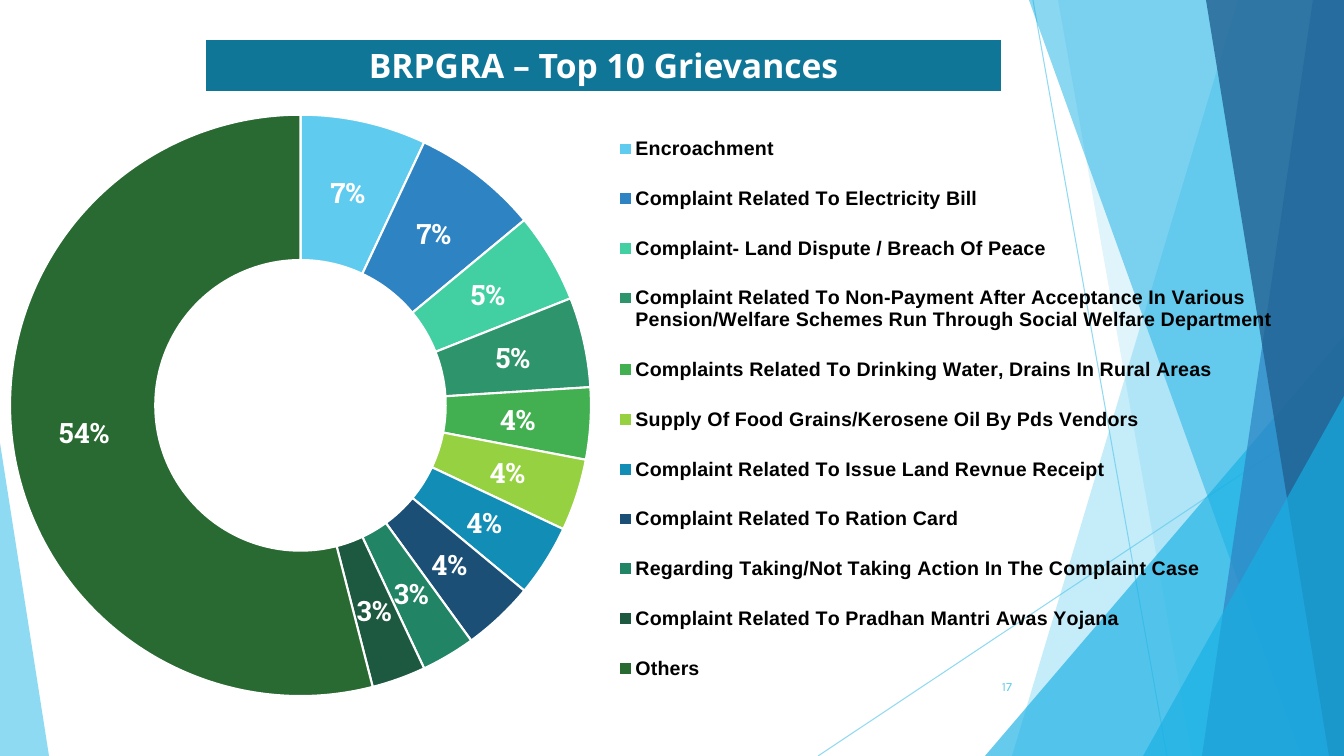
from lxml.etree import SubElement
from pptx import Presentation
from pptx.chart.data import CategoryChartData
from pptx.dml.color import RGBColor
from pptx.enum.chart import XL_CHART_TYPE as ChartType, XL_LEGEND_POSITION as LegendPosition
from pptx.enum.shapes import MSO_CONNECTOR as Connector
from pptx.enum.text import MSO_ANCHOR as Anchor, PP_ALIGN as Align
from pptx.oxml import parse_xml
from pptx.oxml.ns import nsdecls, qn
from pptx.util import Pt

SCALE = 914400 / 100.8
PAGE = (1344, 756)

TITLE = "BRPGRA – Top 10 Grievances"
TITLE_BOX = (206, 40, 795, 51)
NUMBER = "17"
NUMBER_BOX = (947, 666, 75, 41)
CHART_BOX = (9, 84, 1292, 656)
RING_LAYOUT = (0, 0.04, 0.45, 0.9)
LEGEND_LAYOUT = (0.46, 0.04, 0.53, 0.91)

GRIEVANCES = [
    ("Encroachment", 7, "5FCBEF"),
    ("Complaint Related To Electricity Bill", 7, "2E83C3"),
    ("Complaint- Land Dispute / Breach Of Peace", 5, "42D0A2"),
    ("Complaint Related To Non-Payment After Acceptance In Various "
     "Pension/Welfare Schemes Run Through Social Welfare Department", 5, "2E946B"),
    ("Complaints Related To Drinking Water, Drains In Rural Areas", 4, "42B051"),
    ("Supply Of Food Grains/Kerosene Oil By Pds Vendors", 4, "96D141"),
    ("Complaint Related To Issue Land Revnue Receipt", 4, "128DB6"),
    ("Complaint Related To Ration Card", 4, "1C4F75"),
    ("Regarding Taking/Not Taking Action In The Complaint Case", 3, "218464"),
    ("Complaint Related To Pradhan Mantri Awas Yojana", 3, "1C5940"),
    ("Others", 54, "286A31"),
]

RAYS = [(1033, 0, 1167, 756), (1344, 406, 818, 756)]
FACETS = [
    ([(1238, 0), (1344, 0), (1344, 756), (1012, 756)], "5FCBEF", 36),
    ([(1058, 0), (1344, 0), (1344, 756), (1192, 756)], "5FCBEF", 20),
    ([(1344, 336), (1344, 756), (985, 756)], "17B0E4", 66),
    ([(1029, 0), (1344, 0), (1344, 756), (1301, 756)], "17B0E4", 50),
    ([(1313, 0), (1344, 0), (1344, 756), (1202, 756)], "2E83C3", 70),
    ([(1206, 0), (1344, 0), (1344, 756), (1329, 756)], "226292", 80),
    ([(1344, 396), (1344, 756), (1143, 756)], "17B0E4", 66),
    ([(0, 443), (49, 756), (0, 756)], "5FCBEF", 70),
]


def emu(*lengths):
    return [round(length * SCALE) for length in lengths]


def paint(fill, color, opacity=100):
    fill.solid()
    fill.fore_color.rgb = RGBColor.from_string(color)
    if opacity < 100:
        tint = fill._xPr.find(".//" + qn("a:srgbClr"))
        SubElement(tint, qn("a:alpha"), val=str(opacity * 1000))


def style(font, name, size, color, bold=False):
    font.name, font.size, font.bold = name, Pt(size), bold
    font.color.rgb = RGBColor.from_string(color)


def layout_xml(area, inner=False):
    target = '<c:layoutTarget val="inner"/>' if inner else ""
    modes = '<c:xMode val="edge"/><c:yMode val="edge"/>'
    sizes = "".join(f'<c:{key} val="{value}"/>' for key, value in zip("xywh", area))
    return parse_xml(f'<c:layout {nsdecls("c")}><c:manualLayout>{target}{modes}{sizes}'
                     "</c:manualLayout></c:layout>")


def add_backdrop(page):
    for ray in RAYS:
        line = page.shapes.add_connector(Connector.STRAIGHT, *emu(*ray))
        paint(line.line.fill, "5FCBEF", 70)
        line.line.width = Pt(0.75)
        SubElement(line._element.spPr, qn("a:effectLst"))
    for corners, color, opacity in FACETS:
        builder = page.shapes.build_freeform(*corners[0], scale=SCALE)
        builder.add_line_segments(corners[1:], close=True)
        facet = builder.convert_to_shape()
        facet.shadow.inherit = False
        facet.line.fill.background()
        paint(facet.fill, color, opacity)


def add_title(page):
    title = page.shapes.title
    title.left, title.top, title.width, title.height = emu(*TITLE_BOX)
    paint(title.fill, "0F7698")
    title.text_frame.text = TITLE
    title.text_frame.vertical_anchor = Anchor.MIDDLE
    para = title.text_frame.paragraphs[0]
    para.alignment = Align.CENTER
    style(para.font, "Noto Sans", 24, "FFFFFF", True)


def add_doughnut(page):
    names, shares, colors = zip(*GRIEVANCES)
    data = CategoryChartData()
    data.categories = names
    data.add_series("Series 1", shares)
    chart = page.shapes.add_chart(ChartType.DOUGHNUT, *emu(*CHART_BOX), data).chart
    chart.has_title = False
    style(chart.font, "Karla", 10, "000000")

    plot = chart.plots[0]
    plot.vary_by_categories = True
    for index, color in enumerate(colors):
        slice_format = plot.series[0].points[index].format
        paint(slice_format.fill, color)
        paint(slice_format.line.fill, "FFFFFF")
        slice_format.line.width = Pt(1.5)
    plot.has_data_labels = True
    labels = plot.data_labels
    labels.show_percentage, labels.show_value = True, False
    labels.number_format, labels.number_format_is_linked = "0%", False
    style(labels.font, "Roboto Slab", 20, "FFFFFF", True)

    chart.has_legend = True
    chart.legend.position = LegendPosition.RIGHT
    chart.legend.include_in_layout = False
    style(chart.legend.font, "Arial", 14, "000000", True)

    plot_area = chart.element.find(".//" + qn("c:plotArea"))
    legend = chart.element.find(".//" + qn("c:legend"))
    for holder in (plot_area, legend):
        for layout in holder.findall(qn("c:layout")):
            holder.remove(layout)
    plot_area.insert(0, layout_xml(RING_LAYOUT, inner=True))
    legend.find(qn("c:legendPos")).addnext(layout_xml(LEGEND_LAYOUT))


def add_number(page):
    frame = page.shapes.add_textbox(*emu(*NUMBER_BOX)).text_frame
    frame.word_wrap = True
    frame.vertical_anchor = Anchor.MIDDLE
    frame.text = NUMBER
    para = frame.paragraphs[0]
    para.alignment = Align.RIGHT
    style(para.font, "Karla", 9, "5FCBEF")


def main():
    deck = Presentation()
    deck.slide_width, deck.slide_height = emu(*PAGE)
    page = deck.slides.add_slide(deck.slide_layouts[5])
    add_backdrop(page)
    add_title(page)
    add_doughnut(page)
    add_number(page)
    deck.save("out.pptx")


if __name__ == "__main__":
    main()
